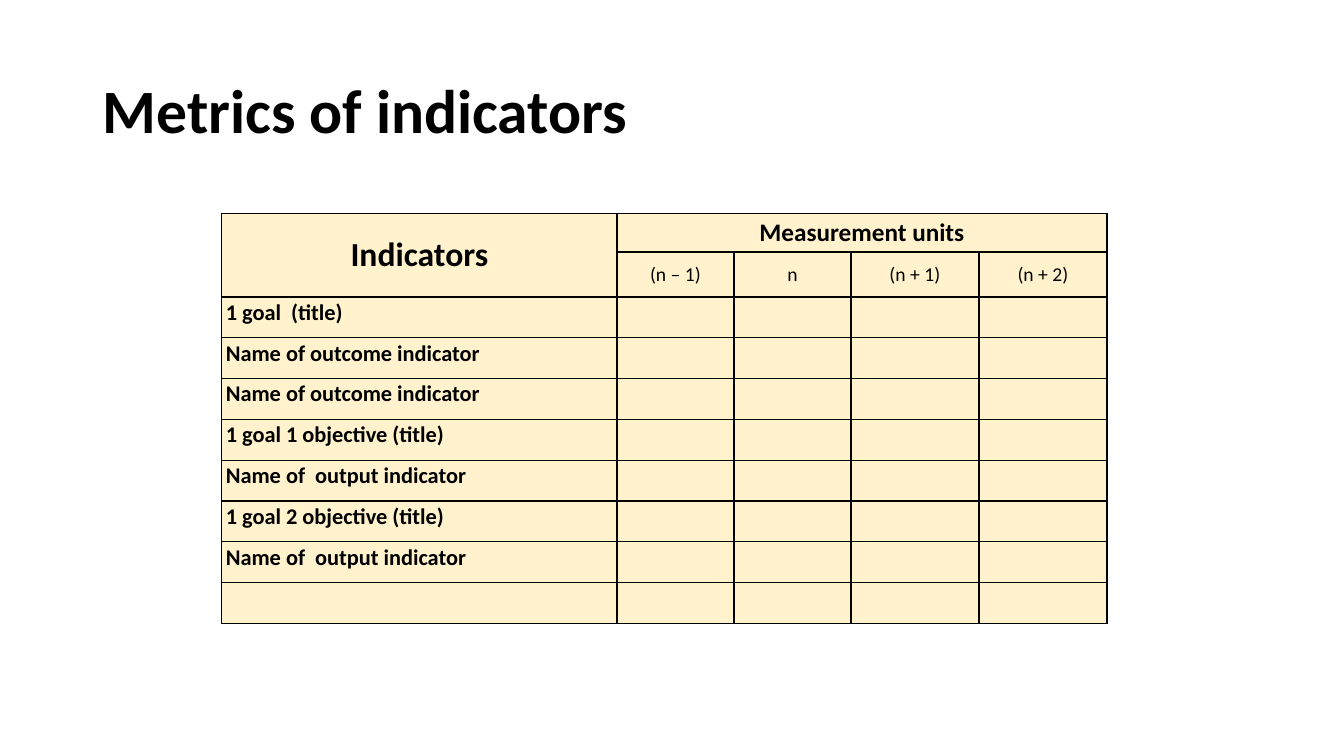
import pptx
import pptx.dml.color
import pptx.enum.text
import pptx.oxml
import pptx.oxml.ns
import pptx.util

Inches = pptx.util.Inches
ALIGN = pptx.enum.text.PP_ALIGN
ANCHOR = pptx.enum.text.MSO_ANCHOR

# Content
TITLE = "Metrics of indicators"
INDICATORS_HEADING = "Indicators"
UNITS_HEADING = "Measurement units"
PERIODS = ["(n – 1)", "n", "(n + 1)", "(n + 2)"]
INDICATORS = [
    "1 goal  (title)",
    "Name of outcome indicator",
    "Name of outcome indicator",
    "1 goal 1 objective (title)",
    "Name of  output indicator",
    "1 goal 2 objective (title)",
    "Name of  output indicator",
    "",
]

THEME = {
    "font": "Calibri", "text": "000000", "cell": "FFF2CC", "border": "000000", "border_width": 1,
    "title": 44, "indicators": 24, "units": 18, "period": 14, "body": 16,
}

# Layout in inches
TABLE_LEFT, TABLE_TOP = 2.2, 2.12
COLUMN_WIDTHS = [3.92, 1.16, 1.16, 1.27, 1.27]
HEADER_HEIGHTS = [0.38, 0.44]
BODY_HEIGHT = 3.24
ROW_HEIGHTS = HEADER_HEIGHTS + [BODY_HEIGHT / len(INDICATORS)] * len(INDICATORS)


def color(name):
    return pptx.dml.color.RGBColor.from_string(THEME[name])


def write(text_frame, text, size, bold=True, align=ALIGN.LEFT, line_spacing=None):
    paragraph = text_frame.paragraphs[0]
    paragraph.alignment = align
    if line_spacing:
        paragraph.line_spacing = line_spacing
    run = paragraph.add_run()
    run.text = text
    run.font.name = THEME["font"]
    run.font.size = pptx.util.Pt(THEME[size])
    run.font.bold = bold
    run.font.color.rgb = color("text")


def style_cell(cell):
    properties = cell._tc.get_or_add_tcPr()
    for side in ("lnL", "lnR", "lnT", "lnB"):
        properties.append(pptx.oxml.parse_xml(
            f'<a:{side} {pptx.oxml.ns.nsdecls("a")} w="{pptx.util.Pt(THEME["border_width"])}">'
            f'<a:solidFill><a:srgbClr val="{THEME["border"]}"/></a:solidFill></a:{side}>'))
    cell.fill.solid()
    cell.fill.fore_color.rgb = color("cell")
    cell.margin_left = cell.margin_right = Inches(0.04)
    cell.margin_top = cell.margin_bottom = Inches(0.02)


def add_title(slide):
    title = slide.shapes.title
    title.left, title.top = Inches(0.92), Inches(0.4)
    title.width, title.height = Inches(11.5), Inches(1.45)
    title.text_frame.vertical_anchor = ANCHOR.MIDDLE
    write(title.text_frame, TITLE, "title", line_spacing=0.9)


def add_indicator_table(slide):
    frame = slide.shapes.add_table(
        len(ROW_HEIGHTS), len(COLUMN_WIDTHS), Inches(TABLE_LEFT), Inches(TABLE_TOP),
        Inches(sum(COLUMN_WIDTHS)), Inches(sum(ROW_HEIGHTS)))
    table = frame.table
    table.first_row = table.horz_banding = False
    for column, width in zip(table.columns, COLUMN_WIDTHS):
        column.width = Inches(width)
    for row, height in zip(table.rows, ROW_HEIGHTS):
        row.height = Inches(height)
    for cell in table.iter_cells():
        style_cell(cell)

    # Two header rows
    table.cell(0, 0).merge(table.cell(1, 0))
    table.cell(0, 1).merge(table.cell(0, len(PERIODS)))
    headings = [(0, 0, INDICATORS_HEADING, "indicators", True),
                (0, 1, UNITS_HEADING, "units", True)]
    headings += [(1, column, period, "period", False)
                 for column, period in enumerate(PERIODS, start=1)]
    for row, column, text, size, bold in headings:
        cell = table.cell(row, column)
        cell.vertical_anchor = ANCHOR.MIDDLE
        write(cell.text_frame, text, size, bold=bold, align=ALIGN.CENTER)

    # Indicator names
    for row, name in enumerate(INDICATORS, start=len(HEADER_HEIGHTS)):
        if name:
            write(table.cell(row, 0).text_frame, name, "body")


def main():
    presentation = pptx.Presentation()
    presentation.slide_width, presentation.slide_height = Inches(13.33), Inches(7.5)
    slide = presentation.slides.add_slide(presentation.slide_layouts.get_by_name("Title Only"))
    add_title(slide)
    add_indicator_table(slide)
    presentation.save("out.pptx")


if __name__ == "__main__":
    main()
